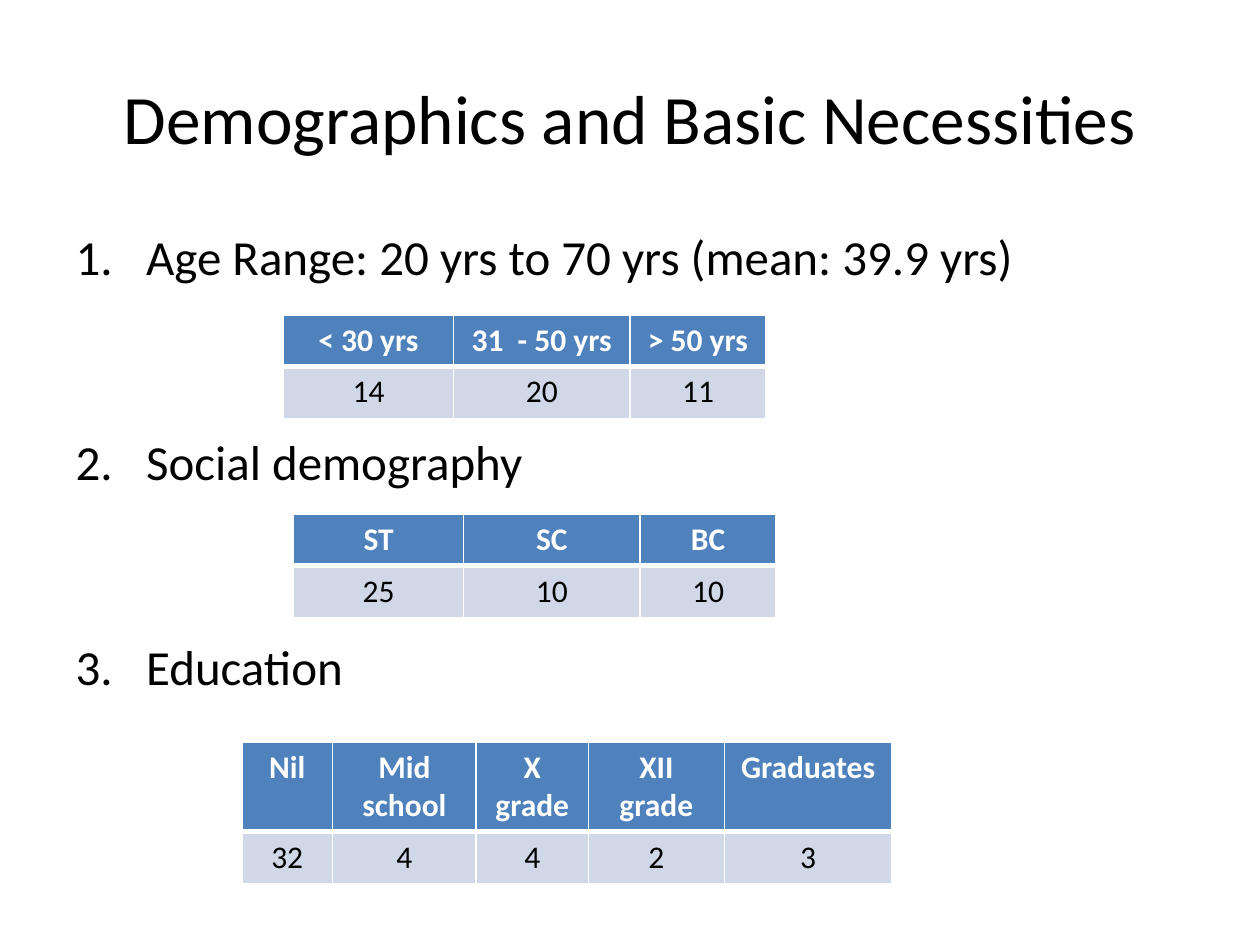
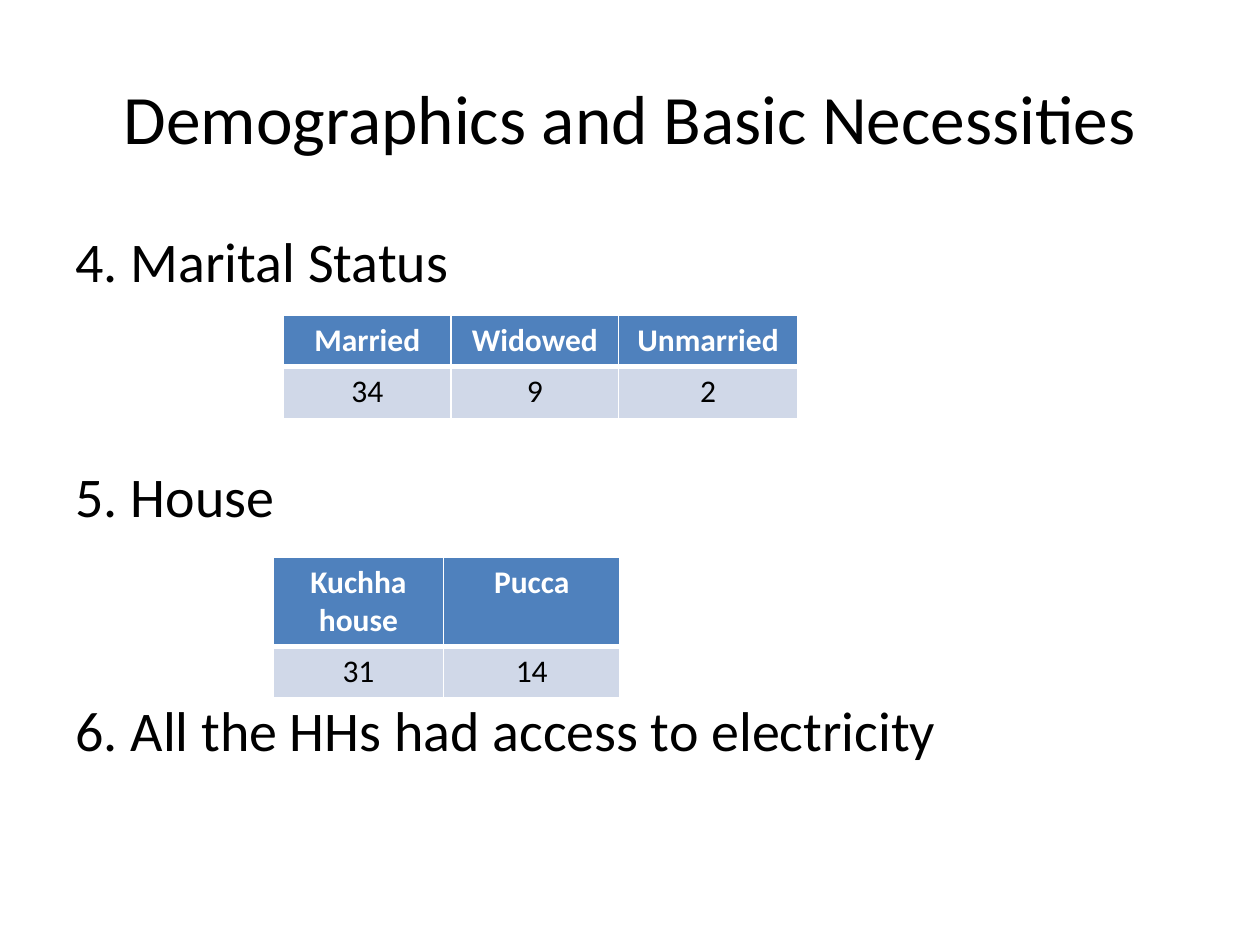
from lxml.etree import SubElement
from pptx import Presentation
from pptx.dml.color import RGBColor
from pptx.enum.text import MSO_ANCHOR, MSO_AUTO_SIZE, PP_ALIGN
from pptx.oxml.ns import qn
from pptx.util import Inches, Pt

BLACK = RGBColor(0x00, 0x00, 0x00)
WHITE = RGBColor(0xFF, 0xFF, 0xFF)
BLUE = RGBColor(0x4F, 0x81, 0xBD)
PALE = RGBColor(0xD0, 0xD8, 0xE8)
FONT = "Calibri"
TITLE = "Demographics and Basic Necessities"
TITLE_BOX = (0.5, 0.3, 9, 1.25)
ROW = 0.41


def write(para, text, size=18, color=BLACK, bold=False, align=PP_ALIGN.LEFT):
    para.alignment = align
    run = para.add_run()
    run.text = text
    font = run.font
    font.name, font.size, font.bold = FONT, Pt(size), bold
    font.color.rgb = color


def place(shape, box):
    shape.left, shape.top, shape.width, shape.height = map(Inches, box)
    shape.text_frame.auto_size = MSO_AUTO_SIZE.NONE
    return shape.text_frame


def add_title(slide):
    frame = place(slide.shapes.title, TITLE_BOX)
    frame.vertical_anchor = MSO_ANCHOR.MIDDLE
    write(frame.paragraphs[0], TITLE, size=39.6, align=PP_ALIGN.CENTER)


def add_list(slide, box, items, size, gap, indent, auto):
    """Fill the body; the gap between items leaves room for the tables."""
    frame = place(slide.placeholders[1], box)
    for i, item in enumerate(items):
        para = frame.add_paragraph() if i else frame.paragraphs[0]
        write(para, item, size=size)
        if i:
            para.space_before = Pt(gap)
        props = para._p.get_or_add_pPr()
        props.set("marL", str(Inches(indent)))
        props.set("indent", str(-Inches(indent)))
        if auto:
            SubElement(props, qn("a:buAutoNum"), type="arabicPeriod")
        else:
            SubElement(props, qn("a:buNone"))


def set_edges(cell, top, bottom):
    props = cell._tc.get_or_add_tcPr()
    for side, width in (("L", 1), ("R", 1), ("T", top), ("B", bottom)):
        line = SubElement(props, qn("a:ln" + side), w=str(Pt(width)))
        fill = SubElement(line, qn("a:solidFill"))
        SubElement(fill, qn("a:srgbClr"), val=str(WHITE))


def add_counts(slide, left, top, widths, heads, counts, head=ROW):
    """Draw a header row above a row of counts."""
    frame = slide.shapes.add_table(
        2, len(widths), Inches(left), Inches(top),
        Inches(sum(widths)), Inches(head + ROW))
    table = frame.table
    for col, width in zip(table.columns, widths):
        col.width = Inches(width)
    # Each row: height, texts, fill, text colour, bold, top and bottom edge
    rows = ((head, heads, BLUE, WHITE, True, 1, 3),
            (ROW, counts, PALE, BLACK, False, 3, 1))
    for r, (height, texts, fill, color, bold, upper, lower) in enumerate(rows):
        table.rows[r].height = Inches(height)
        for c, text in enumerate(texts):
            cell = table.cell(r, c)
            set_edges(cell, upper, lower)
            cell.fill.solid()
            cell.fill.fore_color.rgb = fill
            write(cell.text_frame.paragraphs[0], str(text), color=color,
                  bold=bold, align=PP_ALIGN.CENTER)


def add_page(deck, body, tables):
    slide = deck.slides.add_slide(deck.slide_layouts[1])
    add_title(slide)
    add_list(slide, **body)
    for table in tables:
        add_counts(slide, **table)


def main():
    deck = Presentation()
    deck.slide_width, deck.slide_height = Inches(10), Inches(7.5)
    trio = (1.35, 1.4, 1.08)

    # Age, social group and education
    add_page(
        deck,
        dict(box=(0.5, 1.75, 9, 5.33), size=28, gap=83.5, indent=0.56,
             auto=True,
             items=("Age Range: 20 yrs to 70 yrs (mean: 39.9 yrs)",
                    "Social demography", "Education")),
        (dict(left=2.25, top=2.5, widths=trio,
              heads=("< 30 yrs", "31  - 50 yrs", "> 50 yrs"),
              counts=(14, 20, 11)),
         dict(left=2.33, top=4.08, widths=trio,
              heads=("ST", "SC", "BC"), counts=(25, 10, 10)),
         dict(left=1.92, top=5.89, widths=(0.72, 1.14, 0.89, 1.08, 1.33),
              heads=("Nil", "Mid school", "X grade", "XII grade", "Graduates"),
              counts=(32, 4, 4, 2, 3), head=0.7)))

    # Marital status, house and electricity
    add_page(
        deck,
        dict(box=(0.5, 1.75, 9, 4.95), size=32, gap=95.5, indent=0.38,
             auto=False,
             items=("4. Marital Status", "5. House",
                    "6. All the HHs had access to electricity")),
        (dict(left=2.25, top=2.5, widths=(1.33, 1.33, 1.42),
              heads=("Married", "Widowed", "Unmarried"), counts=(34, 9, 2)),
         dict(left=2.17, top=4.42, widths=trio[:2],
              heads=("Kuchha house", "Pucca"), counts=(31, 14), head=0.7)))

    deck.save("out.pptx")


if __name__ == "__main__":
    main()
